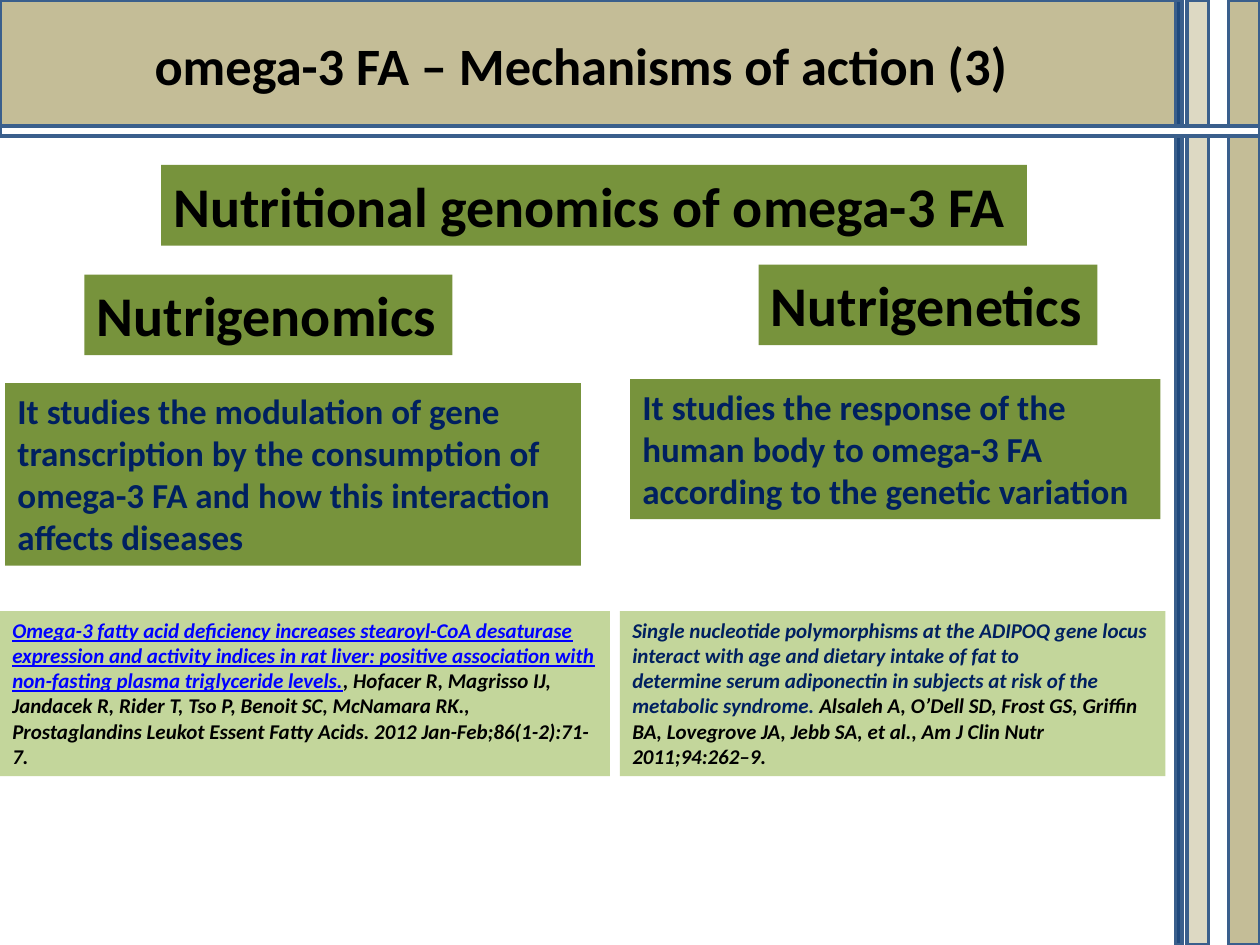
from pptx import Presentation
from pptx.dml.color import RGBColor
from pptx.enum.text import MSO_ANCHOR, MSO_AUTO_SIZE, PP_ALIGN
from pptx.enum.shapes import MSO_SHAPE
from pptx.util import Inches, Pt

RECT = MSO_SHAPE.RECTANGLE
TOP = MSO_ANCHOR.TOP
FIXED = MSO_AUTO_SIZE.NONE
LEFT, CENTER = PP_ALIGN.LEFT, PP_ALIGN.CENTER

TITLE_ONLY = 5
COLS, ROWS = 100, 75
BLACK, WHITE, NAVY, LINK = "000000", "FFFFFF", "002060", "0000FF"
TAN, LIGHT_TAN, BLUE, EDGE = "C4BD97", "DDD9C3", "1F497D", "3A5F8C"
GREEN, PALE_GREEN = "77933C", "C3D69B"


def rgb(value):
    return RGBColor.from_string(value)


class Deck:
    """Slide style; every box is (column, row, columns, rows)."""
    font = "Calibri"

    def __init__(self, prs):
        self.cell_w = prs.slide_width / COLS
        self.cell_h = prs.slide_height / ROWS
        self.s = prs.slides.add_slide(prs.slide_layouts[TITLE_ONLY])

    def place(self, box):
        x, y, w, h = box
        return (round(x * self.cell_w), round(y * self.cell_h),
                round(w * self.cell_w), round(h * self.cell_h))

    def band(self, box, fill):
        sp = self.s.shapes.add_shape(RECT, *self.place(box))
        sp.shadow.inherit = False
        sp.fill.solid()
        sp.fill.fore_color.rgb = rgb(fill)
        sp.line.color.rgb = rgb(EDGE)
        sp.line.width = Pt(2)

    def set_text(self, tf, paragraphs, size, wrap, align=LEFT, italic=False):
        """Fill a frame; each paragraph is a list of (text, colour) runs."""
        tf.word_wrap = wrap
        tf.auto_size = FIXED
        tf.vertical_anchor = TOP
        for i, runs in enumerate(paragraphs):
            p = tf.add_paragraph() if i else tf.paragraphs[0]
            p.alignment = align
            p.font.name, p.font.size = self.font, Pt(size)
            p.font.bold, p.font.italic = True, italic
            for text, color in runs:
                r = p.add_run()
                r.text = text
                r.font.color.rgb = rgb(color)
                if color == LINK:
                    r.font.underline = True

    def title(self, box, text):
        sp = self.s.shapes.title
        sp.left, sp.top, sp.width, sp.height = self.place(box)
        self.s.shapes._spTree.append(sp._element)  # bring in front of the bands
        self.set_text(sp.text_frame, [[(text, BLACK)]], 30, False, CENTER)

    def panel(self, box, fill, paragraphs, size, wrap=True, italic=False):
        sp = self.s.shapes.add_textbox(*self.place(box))
        sp.fill.solid()
        sp.fill.fore_color.rgb = rgb(fill)
        self.set_text(sp.text_frame, paragraphs, size, wrap, italic=italic)

    def heading(self, box, text):
        self.panel(box, GREEN, [[(text, BLACK)]], 32, wrap=False)

    def definition(self, box, text):
        self.panel(box, GREEN, [[(text, NAVY)]], 20)

    def reference(self, box, paragraphs):
        self.panel(box, PALE_GREEN, paragraphs, 12, italic=True)


def main():
    prs = Presentation()
    prs.slide_width, prs.slide_height = Inches(10), Inches(7.5)
    deck = Deck(prs)

    deck.band((0, 0, 93.3, 10), TAN)
    for x, width, fill in ((97.5, 2.5, TAN), (94.2, 1.7, LIGHT_TAN), (93.3, 0.5, BLUE)):
        deck.band((x, 0, width, ROWS), fill)
    deck.band((0, 10, COLS, 0.8), WHITE)
    deck.title((10.9, 2.1, 71.4, 6.1), "omega-3 FA – Mechanisms of action (3) ")

    deck.heading((12.8, 13.1, 68.7, 6.4), "Nutritional genomics of omega-3 FA")
    deck.heading((60.2, 21, 26.9, 6.4), "Nutrigenetics")
    deck.heading((6.7, 21.8, 29.2, 6.4), "Nutrigenomics")

    deck.definition((0.4, 30.4, 45.7, 14.5),
                    "It studies the modulation of gene transcription by the consumption "
                    "of omega-3 FA and how this interaction affects diseases")
    deck.definition((50, 30.1, 42.1, 11.1),
                    "It studies the response of the human body to omega-3 FA "
                    "according to the genetic variation")

    deck.reference((49.2, 48.5, 43.3, 13.1), [
        [("Single nucleotide polymorphisms at the ADIPOQ gene locus interact "
          "with age and dietary intake of fat to", NAVY)],
        [("determine serum adiponectin in subjects at risk of the "
          "metabolic syndrome. ", NAVY),
         ("Alsaleh A, O’Dell SD, Frost GS, Griffin BA, Lovegrove JA, Jebb SA, "
          "et al., Am J Clin Nutr", BLACK)],
        [("2011;94:262–9.", BLACK)],
    ])
    deck.reference((0, 48.5, 48.4, 13.1), [
        [("Omega-3 fatty acid deficiency increases stearoyl-CoA desaturase "
          "expression and activity indices in rat liver: positive association "
          "with non-fasting plasma triglyceride levels.", LINK),
         (", Hofacer R, Magrisso IJ, Jandacek R, Rider T, Tso P, Benoit SC, "
          "McNamara RK., Prostaglandins Leukot Essent Fatty Acids. "
          "2012 Jan-Feb;86(1-2):71-7.", BLACK)],
    ])
    prs.save("out.pptx")


if __name__ == "__main__":
    main()
